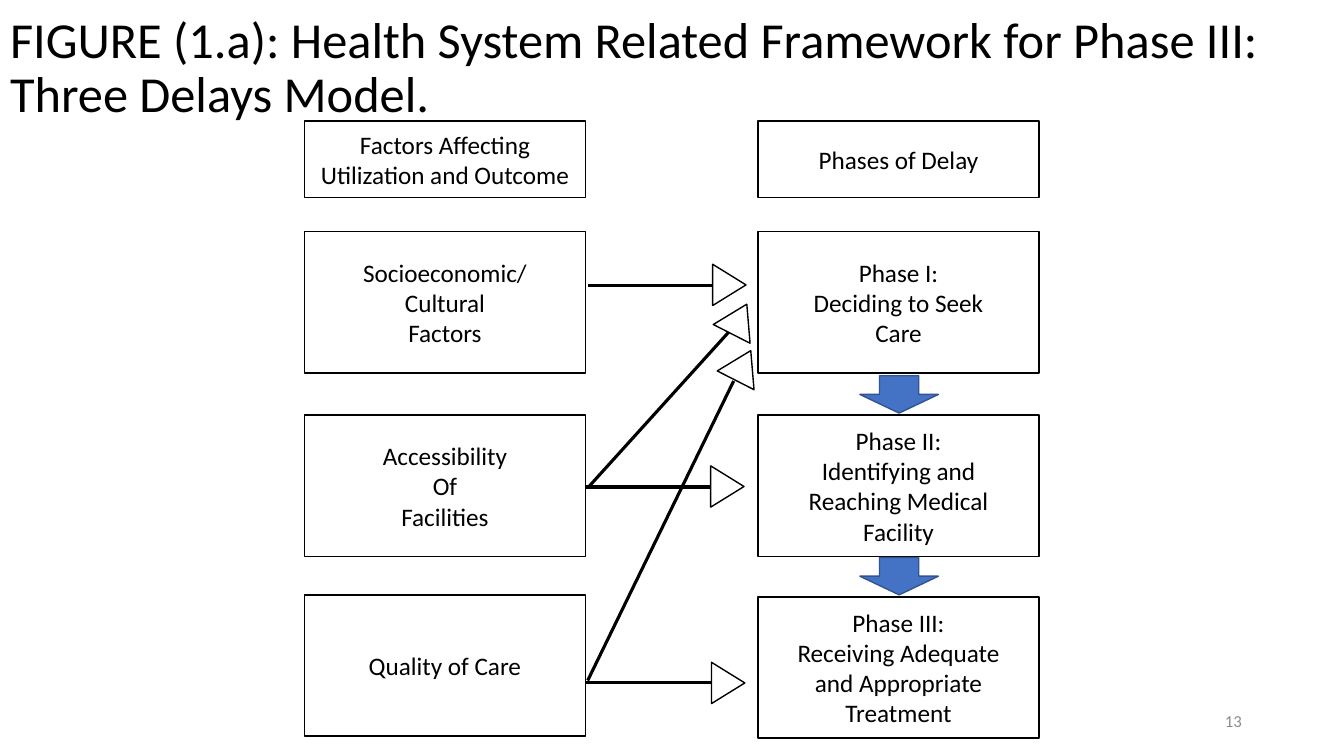
import dataclasses

import pptx
import pptx.dml.color
import pptx.enum.shapes
import pptx.enum.text
import pptx.oxml
import pptx.util

Cm = pptx.util.Cm
Pt = pptx.util.Pt
Shape = pptx.enum.shapes.MSO_SHAPE
Align = pptx.enum.text.PP_ALIGN


@dataclasses.dataclass(frozen=True)
class Theme:
    font: str = "Calibri"
    ink: str = "000000"
    paper: str = "FFFFFF"
    accent: str = "4472C4"
    accent_edge: str = "325491"
    muted: str = "8C8C8C"
    title_size: float = 36
    body_size: float = 18
    number_size: float = 12
    edge: float = 1
    link: float = 2.25


THEME = Theme()
BOX_WIDTH = 7.09
HEADER_HEIGHT, BOX_HEIGHT = 1.93, 3.56

# Each column: left edge, then (top, height, text) for every box
COLUMNS = [
    (7.67, [
        (3.05, HEADER_HEIGHT, "Factors Affecting\nUtilization and Outcome"),
        (5.84, BOX_HEIGHT, "Socioeconomic/\nCultural\nFactors"),
        (10.46, BOX_HEIGHT, "Accessibility\nOf\nFacilities"),
        (14.99, BOX_HEIGHT, "Quality of Care"),
    ]),
    (19.1, [
        (3.05, HEADER_HEIGHT, "Phases of Delay"),
        (5.84, BOX_HEIGHT, "Phase I:\nDeciding to Seek\nCare"),
        (10.46, BOX_HEIGHT,
         "Phase II:\nIdentifying and\nReaching Medical\nFacility"),
        (15.04, BOX_HEIGHT,
         "Phase III:\nReceiving Adequate\nand Appropriate\nTreatment"),
    ]),
]
PHASE_ARROW_TOPS = [9.47, 14.05]

# Each link: line start, line end, centre of the head, rotation of the head
LINKS = [
    ((14.76, 12.27), (17.91, 12.27), (18.33, 12.26), 90),
    ((14.78, 17.2), (17.93, 17.2), (18.35, 17.21), 90),
    ((14.83, 7.19), (17.96, 7.19), (18.38, 7.18), 90),
    ((14.81, 17.15), (18.49, 9.6), (18.73, 9.21), 27),
    ((14.86, 12.24), (18.49, 8.23), (18.63, 8.04), 27),
]
HEAD_WIDTH, HEAD_HEIGHT = 1.04, 0.84


def color(value):
    return pptx.dml.color.RGBColor.from_string(value)


def write(shape, text, *, size=THEME.body_size, ink=THEME.ink,
          align=Align.CENTER, spacing=None):
    """Fill a shape with text, one paragraph for each line."""
    frame = shape.text_frame
    frame.word_wrap = True
    frame.auto_size = pptx.enum.text.MSO_AUTO_SIZE.NONE
    frame.vertical_anchor = pptx.enum.text.MSO_ANCHOR.MIDDLE
    frame.text = text
    for para in frame.paragraphs:
        para.alignment = align
        para.line_spacing = spacing
        for span in para.runs:
            span.font.name = THEME.font
            span.font.size = Pt(size)
            span.font.color.rgb = color(ink)


def add_block(page, kind, left, top, width, height, *,
              fill=THEME.paper, edge=THEME.ink):
    block = page.shapes.add_shape(
        kind, Cm(left), Cm(top), Cm(width), Cm(height))
    block.shadow.inherit = False
    block.fill.solid()
    block.fill.fore_color.rgb = color(fill)
    block.line.color.rgb = color(edge)
    block.line.width = Pt(THEME.edge)
    return block


def add_link(page, start, end, center, rotation):
    """Draw a line with a separate open triangle as its head."""
    line = page.shapes.add_connector(
        pptx.enum.shapes.MSO_CONNECTOR.STRAIGHT,
        Cm(start[0]), Cm(start[1]), Cm(end[0]), Cm(end[1]))
    line.line.color.rgb = color(THEME.ink)
    line.line.width = Pt(THEME.link)
    properties = line._element.spPr
    properties.append(pptx.oxml.parse_xml(
        '<a:effectLst xmlns:a='
        '"http://schemas.openxmlformats.org/drawingml/2006/main"/>'))
    head = add_block(page, Shape.ISOSCELES_TRIANGLE,
                     center[0] - HEAD_WIDTH / 2, center[1] - HEAD_HEIGHT / 2,
                     HEAD_WIDTH, HEAD_HEIGHT)
    head.rotation = rotation


def add_title(page, text):
    title = page.shapes.title
    title.left, title.top = Cm(0), Cm(-0.1)
    title.width, title.height = Cm(33.87), Cm(3.68)
    write(title, text, size=THEME.title_size, align=Align.LEFT, spacing=0.9)


def add_page_number(page, text):
    box = page.shapes.add_textbox(Cm(23.93), Cm(17.65), Cm(7.62), Cm(1.02))
    write(box, text, size=THEME.number_size, ink=THEME.muted,
          align=Align.RIGHT)


def main():
    deck = pptx.Presentation()
    deck.slide_width, deck.slide_height = Cm(33.87), Cm(19.05)
    page = deck.slides.add_slide(deck.slide_layouts.get_by_name("Title Only"))

    add_title(page, "FIGURE (1.a): Health System Related Framework for "
                    "Phase III: Three Delays Model.")
    add_page_number(page, "13")
    for left, boxes in COLUMNS:
        for top, height, text in boxes:
            box = add_block(page, Shape.RECTANGLE,
                            left, top, BOX_WIDTH, height)
            write(box, text)
    for top in PHASE_ARROW_TOPS:
        add_block(page, Shape.DOWN_ARROW, 21.67, top, 1.98, 0.94,
                  fill=THEME.accent, edge=THEME.accent_edge)
    for link in LINKS:
        add_link(page, *link)

    deck.save("out.pptx")


if __name__ == "__main__":
    main()
